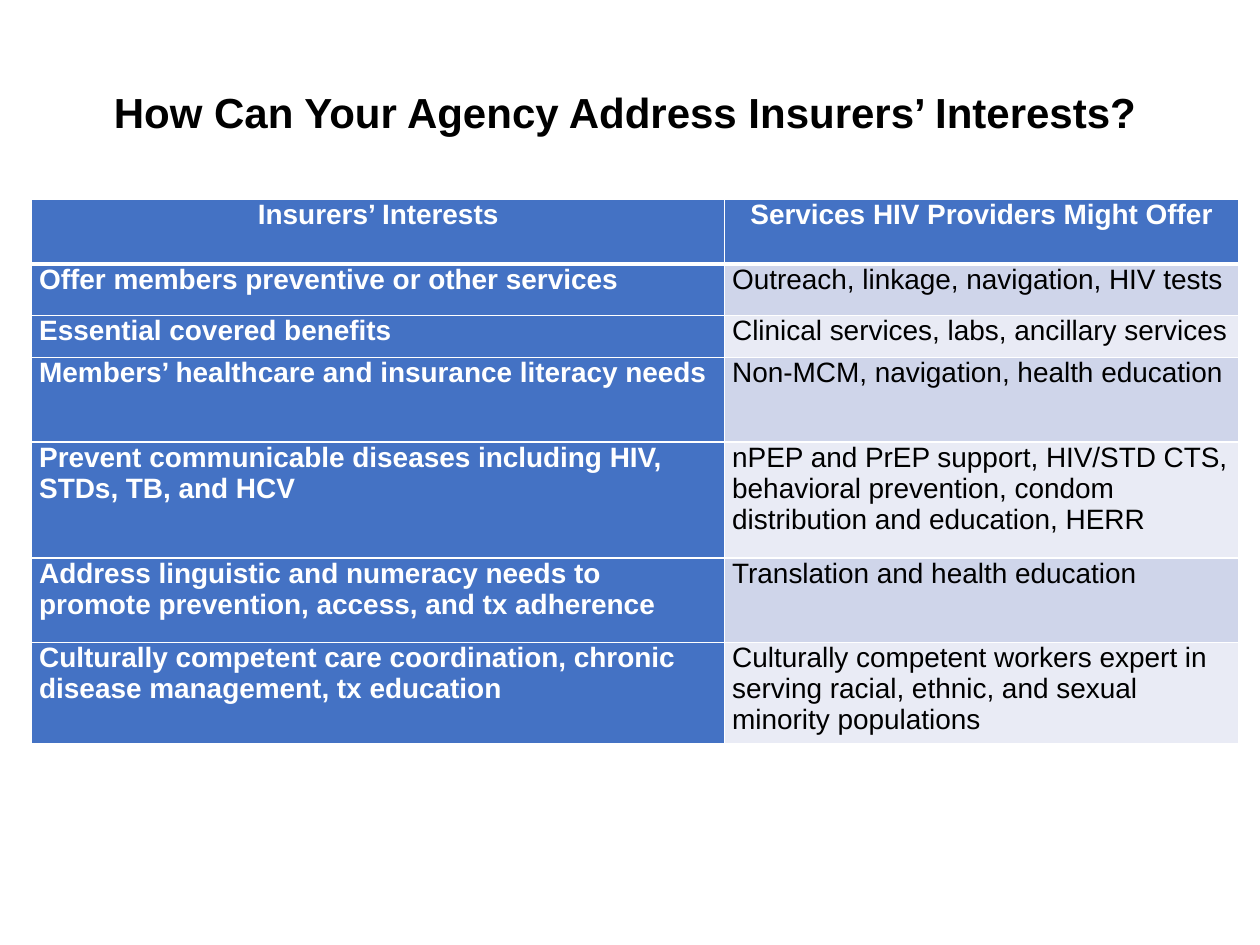
from dataclasses import dataclass

from lxml.etree import SubElement
from pptx import Presentation
from pptx.dml.color import RGBColor
from pptx.enum.text import MSO_ANCHOR, PP_ALIGN
from pptx.oxml.ns import qn
from pptx.slide import Slide
from pptx.table import _Cell
from pptx.text.text import _Paragraph
from pptx.util import Cm, Pt


@dataclass(frozen=True)
class Theme:
    font: str = "Arial"
    title_size: int = 24
    table_size: int = 16
    black: str = "000000"
    white: str = "FFFFFF"
    blue: str = "4472C4"
    bands: tuple[str, str] = ("CFD5EA", "E9EBF5")
    thin: float = 1
    thick: float = 3


@dataclass(frozen=True)
class Row:
    interest: str
    service: str
    height: float


THEME = Theme()
COLUMN_WIDTHS = (13.97, 10.36)
ROWS = (
    Row("Insurers’ Interests", "Services HIV Providers Might Offer", 1.3),
    Row("Offer members preventive or other services",
        "Outreach, linkage, navigation, HIV tests", 1.04),
    Row("Essential covered benefits",
        "Clinical services, labs, ancillary services", 0.85),
    Row("Members’ healthcare and insurance literacy needs",
        "Non-MCM, navigation, health education", 1.7),
    Row("Prevent communicable diseases including HIV, STDs, TB, and HCV",
        "nPEP and PrEP support, HIV/STD CTS, behavioral prevention, "
        "condom distribution and education, HERR", 2.34),
    Row("Address linguistic and numeracy needs to promote prevention, "
        "access, and tx adherence",
        "Translation and health education", 1.7),
    Row("Culturally competent care coordination, chronic disease "
        "management, tx education",
        "Culturally competent workers expert in serving racial, ethnic, "
        "and sexual minority populations", 2.05),
)


def style_text(p: _Paragraph, size: int, color: str, bold: bool,
               align: PP_ALIGN) -> None:
    p.alignment = align
    p.font.name = THEME.font
    p.font.size = Pt(size)
    p.font.bold = bold
    p.font.color.rgb = RGBColor.from_string(color)


def set_borders(cell: _Cell, top: float, bottom: float) -> None:
    tc_pr = cell._tc.get_or_add_tcPr()
    widths = {"a:lnL": THEME.thin, "a:lnR": THEME.thin,
              "a:lnT": top, "a:lnB": bottom}
    for tag, width in widths.items():
        ln = SubElement(tc_pr, qn(tag), w=str(Pt(width)))
        fill = SubElement(ln, qn("a:solidFill"))
        SubElement(fill, qn("a:srgbClr"), val=THEME.white)


def add_title(s: Slide, text: str) -> None:
    sp = s.shapes.add_textbox(Cm(1.27), Cm(1.47), Cm(22.66), Cm(1.7))
    tf = sp.text_frame
    tf.word_wrap = True
    tf.vertical_anchor = MSO_ANCHOR.MIDDLE
    p = tf.paragraphs[0]
    p.text = text
    p.line_spacing = 0.9
    style_text(p, THEME.title_size, THEME.black, True, PP_ALIGN.CENTER)


def fill_cell(cell: _Cell, text: str, row: int, col: int) -> None:
    header = row == 0
    accent = header or col == 0
    cell.margin_left = cell.margin_right = Cm(0.15)
    cell.margin_top = cell.margin_bottom = 0
    set_borders(cell, THEME.thick if row == 1 else THEME.thin,
                THEME.thick if header else THEME.thin)
    cell.fill.solid()
    fill = THEME.blue if accent else THEME.bands[(row - 1) % 2]
    cell.fill.fore_color.rgb = RGBColor.from_string(fill)
    p = cell.text_frame.paragraphs[0]
    p.text = text
    style_text(p, THEME.table_size, THEME.white if accent else THEME.black,
               accent, PP_ALIGN.CENTER if header else PP_ALIGN.LEFT)


def add_interest_table(s: Slide, rows: tuple[Row, ...]) -> None:
    table = s.shapes.add_table(
        len(rows), len(COLUMN_WIDTHS), Cm(0.64), Cm(4.02),
        Cm(sum(COLUMN_WIDTHS)), Cm(sum(row.height for row in rows))).table
    table.first_col = True
    for column, width in zip(table.columns, COLUMN_WIDTHS):
        column.width = Cm(width)
    for i, row in enumerate(rows):
        table.rows[i].height = Cm(row.height)
        for j, text in enumerate((row.interest, row.service)):
            fill_cell(table.cell(i, j), text, i, j)


def main() -> None:
    prs = Presentation()
    prs.slide_width, prs.slide_height = Cm(25.4), Cm(19.05)
    s = prs.slides.add_slide(prs.slide_layouts[6])
    add_title(s, "How Can Your Agency Address Insurers’ Interests?")
    add_interest_table(s, ROWS)
    prs.save("out.pptx")


if __name__ == "__main__":
    main()
